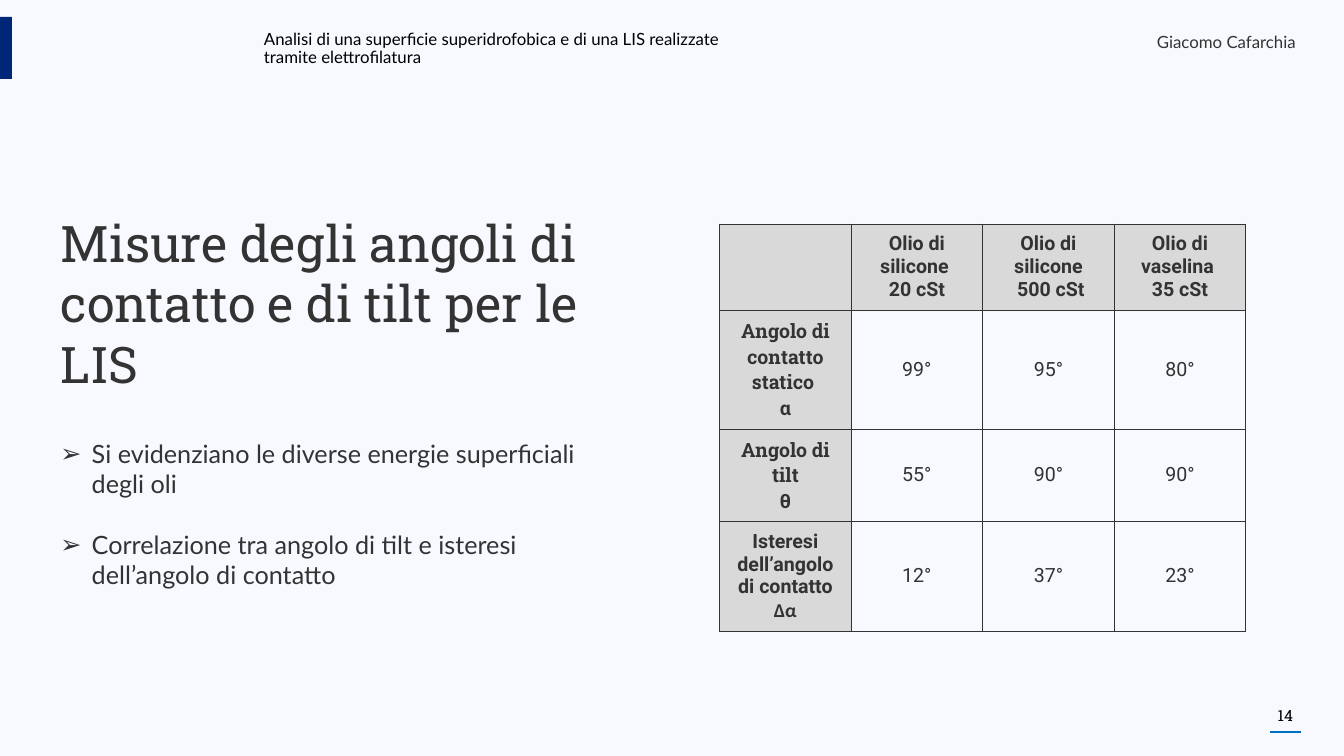
from dataclasses import dataclass

from lxml import etree
from pptx import Presentation
from pptx import util as u
from pptx.dml.color import RGBColor
from pptx.enum import shapes, text
from pptx.oxml.ns import qn

WIDTH, HEIGHT = 26.67, 15
COLOURS = {"page": "F7F9FF", "ink": "333333", "black": "000000",
           "navy": "002677", "blue": "0070C0", "label": "D9D9D9"}
SLAB, LATO, ROBOTO = "Roboto Slab", "Lato", "Roboto"
LEFT, CENTRE, RIGHT = text.PP_ALIGN.LEFT, text.PP_ALIGN.CENTER, text.PP_ALIGN.RIGHT

COLUMN = 2.61
ROWS = (1.67, 2.36, 1.84, 2.15)
OILS = (("Olio di silicone ", "20 cSt"), ("Olio di silicone", " 500 cSt"),
        ("Olio di vaselina ", "35 cSt"))


@dataclass
class Style:
    font: str
    size: float
    colour: str = "ink"
    bold: bool = False
    align: text.PP_ALIGN = LEFT


@dataclass
class TextBlock:
    left: float
    top: float
    width: float
    height: float
    lines: tuple[str, ...]
    style: Style
    inset: bool = False
    spacing: float | u.Length | None = None
    bullet: str = ""
    gap: float = 0


@dataclass
class Measure:
    name: str
    symbol: str
    fonts: tuple[str, str]
    values: tuple[str, ...]


BLOCKS = (
    TextBlock(25.08, 14.02, 0.85, 0.37, ("14",), Style(SLAB, 22, "black", align=CENTRE)),
    TextBlock(5.14, 0.56, 10.33, 0.88,
              ("Analisi di una superficie superidrofobica e di una LIS realizzate tramite elettrofilatura",),
              Style(LATO, 24, "black"), inset=True, spacing=0.9),
    TextBlock(16.11, 0.58, 9.7, 0.88, ("Giacomo Cafarchia",),
              Style(LATO, 24, align=RIGHT), inset=True),
    TextBlock(1.2, 4.2, 10.5, 3.64, ("Misure degli angoli di contatto e di tilt per le LIS",),
              Style(SLAB, 72), spacing=u.Pt(86.4)),
    TextBlock(1.2, 8.7, 10.5, 3.03,
              ("Si evidenziano le diverse energie superficiali degli oli",
               "Correlazione tra angolo di tilt e isteresi dell’angolo di contatto"),
              Style(LATO, 36), bullet="➢", gap=43.2),
)
MEASURES = (
    Measure("Angolo di contatto statico ", "α", (SLAB, SLAB), ("99°", "95°", "80°")),
    Measure("Angolo di tilt", "θ", (SLAB, SLAB), ("55°", "90°", "90°")),
    Measure("Isteresi dell’angolo di contatto", "Δα", (ROBOTO, "Calibri"), ("12°", "37°", "23°")),
)


def rgb(name: str) -> RGBColor:
    return RGBColor.from_string(COLOURS[name])


def write(para, line: str, style: Style) -> None:
    para.alignment = style.align
    span = para.add_run()
    span.text = line
    for key, value in {"name": style.font, "size": u.Pt(style.size), "bold": style.bold}.items():
        setattr(span.font, key, value)
    span.font.color.rgb = rgb(style.colour)


def add_bullet(para, mark: str) -> None:
    props = para._p.get_or_add_pPr()
    props.set("marL", str(u.Inches(0.62)))
    props.set("indent", str(u.Inches(-0.62)))
    etree.SubElement(props, qn("a:buFont"), typeface="Arial")
    etree.SubElement(props, qn("a:buChar"), char=mark)


def add_text(page, block: TextBlock) -> None:
    place = (u.Inches(n) for n in (block.left, block.top, block.width, block.height))
    frame = page.shapes.add_textbox(*place).text_frame
    frame.word_wrap = True
    if not block.inset:
        for side in ("left", "top", "right", "bottom"):
            setattr(frame, f"margin_{side}", 0)
    for i, line in enumerate(block.lines):
        para = frame.add_paragraph() if i else frame.paragraphs[0]
        if block.bullet:
            add_bullet(para, block.bullet)
        if block.spacing:
            para.line_spacing = block.spacing
        if i:
            para.space_before = u.Pt(block.gap)
        write(para, line, block.style)


def add_borders(cell) -> None:
    """Put the four sides before the cell's fill, as the schema asks."""
    props = cell._tc.get_or_add_tcPr()
    for i, side in enumerate(("lnL", "lnR", "lnT", "lnB")):
        line = etree.Element(qn(f"a:{side}"), w=str(u.Pt(1)))
        fill = etree.SubElement(line, qn("a:solidFill"))
        etree.SubElement(fill, qn("a:srgbClr"), val=COLOURS["ink"])
        props.insert(i, line)


def fill_cell(cell, lines: tuple[str, ...], styles: tuple[Style, ...], label: bool) -> None:
    if label:
        cell.fill.solid()
        cell.fill.fore_color.rgb = rgb("label")
    else:
        cell.fill.background()
    add_borders(cell)
    cell.vertical_anchor = text.MSO_ANCHOR.MIDDLE
    for side in ("left", "top", "right", "bottom"):
        setattr(cell, f"margin_{side}", u.Inches(0.15))
    for i, (line, style) in enumerate(zip(lines, styles)):
        para = cell.text_frame.add_paragraph() if i else cell.text_frame.paragraphs[0]
        write(para, line, style)


def add_measures(page) -> None:
    columns = len(OILS) + 1
    table = page.shapes.add_table(len(ROWS), columns, u.Inches(14.28), u.Inches(4.45),
                                  u.Inches(COLUMN * columns), u.Inches(sum(ROWS))).table
    table.first_row = table.horz_banding = False
    for column in table.columns:
        column.width = u.Inches(COLUMN)
    for row, height in zip(table.rows, ROWS):
        row.height = u.Inches(height)
    head = Style(ROBOTO, 28, bold=True, align=CENTRE)
    plain = Style(ROBOTO, 28, align=CENTRE)
    for c, lines in enumerate(((), *OILS)):
        fill_cell(table.cell(0, c), lines, (head, head), True)
    for r, measure in enumerate(MEASURES, 1):
        styles = tuple(Style(font, 28, bold=True, align=CENTRE) for font in measure.fonts)
        fill_cell(table.cell(r, 0), (measure.name, measure.symbol), styles, True)
        for c, value in enumerate(measure.values, 1):
            fill_cell(table.cell(r, c), (value,), (plain,), False)


def add_marks(page) -> None:
    """Draw the navy tab at the top left and the rule under the page number."""
    tab = page.shapes.add_shape(shapes.MSO_SHAPE.RECTANGLE, u.Inches(-0.5), u.Inches(0.83),
                                u.Inches(1.23), u.Inches(0.24))
    tab.rotation = 270
    tab.shadow.inherit = False
    tab.fill.solid()
    tab.fill.fore_color.rgb = rgb("navy")
    tab.line.fill.background()
    rule = page.shapes.add_connector(shapes.MSO_CONNECTOR.STRAIGHT, u.Inches(25.2),
                                     u.Inches(14.52), u.Inches(25.81), u.Inches(14.52))
    rule.line.color.rgb = rgb("blue")
    rule.line.width = u.Pt(3)
    etree.SubElement(rule._element.spPr, qn("a:effectLst"))


def main() -> None:
    deck = Presentation()
    deck.slide_width, deck.slide_height = u.Inches(WIDTH), u.Inches(HEIGHT)
    page = deck.slides.add_slide(deck.slide_layouts[6])
    page.background.fill.solid()
    page.background.fill.fore_color.rgb = rgb("page")
    add_marks(page)
    for block in BLOCKS:
        add_text(page, block)
    add_measures(page)
    deck.save("out.pptx")


if __name__ == "__main__":
    main()
